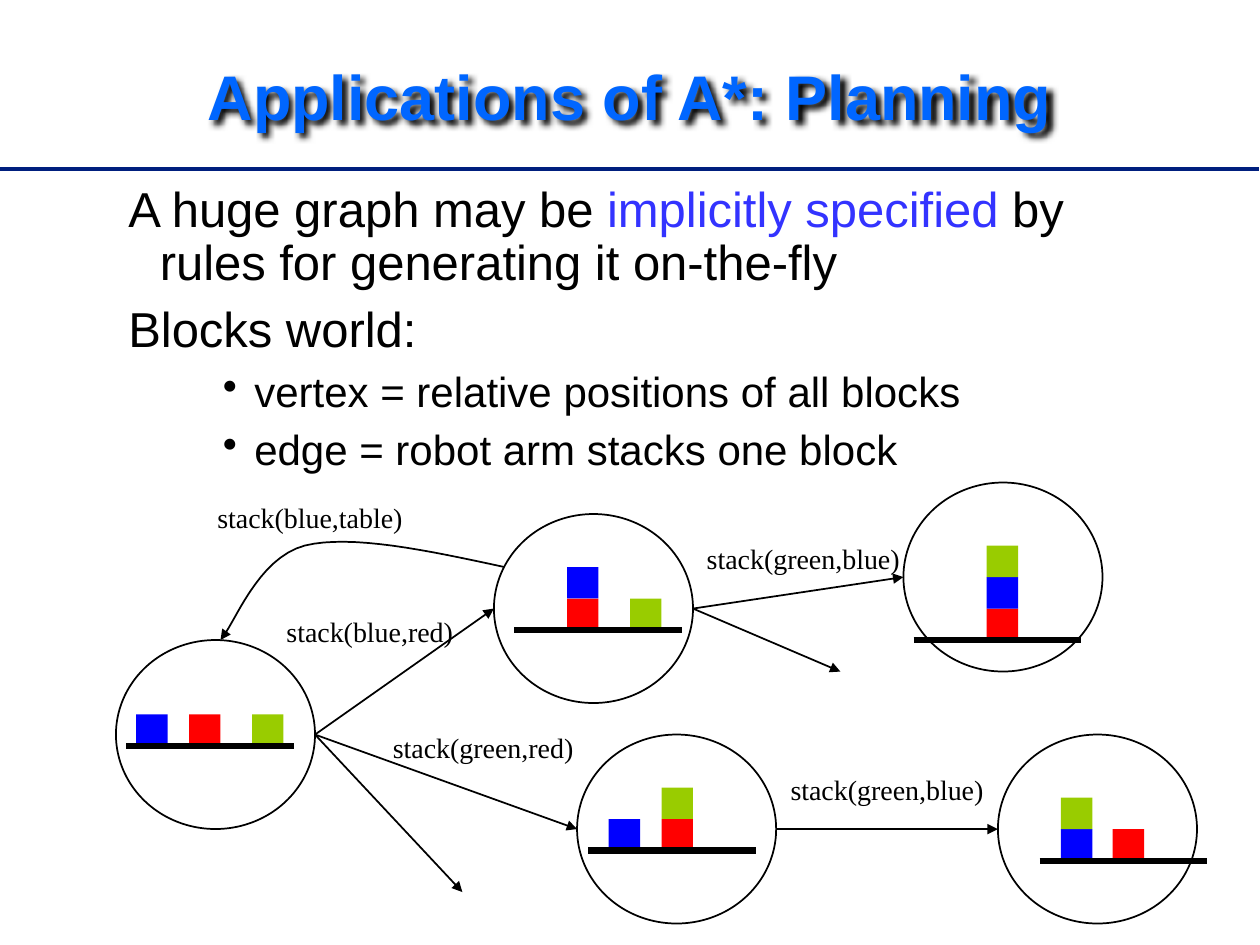
from lxml.etree import SubElement
from pptx import Presentation
from pptx.dml.color import RGBColor
from pptx.enum.shapes import MSO_CONNECTOR, MSO_SHAPE
from pptx.enum.text import MSO_ANCHOR, PP_ALIGN
from pptx.oxml.ns import qn
from pptx.util import Inches, Pt

BLACK, WHITE, BLUE, RED, GREEN = "000000", "FFFFFF", "0000FF", "FF0000", "99CC00"
CIRCLE_WIDTH, CIRCLE_HEIGHT, BLOCK, TABLE_WIDTH = 1.58, 1.5, 0.25, 1.33

# circle left and top, table left and top, stacks as (offset, colours from the bottom)
STATES = [
    (0.92, 5.08, 1, 5.92, [(0.08, [BLUE]), (0.5, [RED]), (1, [GREEN])]),
    (3.92, 4.08, 4.08, 5, [(0.42, [RED, BLUE]), (0.92, [GREEN])]),
    (7.17, 3.83, 7.25, 5.08, [(0.58, [RED, BLUE, GREEN])]),
    (4.58, 5.83, 4.67, 6.75, [(0.16, [BLUE]), (0.58, [RED, GREEN])]),
    (7.92, 5.83, 8.25, 6.83, [(0.17, [BLUE, GREEN]), (0.58, [RED])]),
]
ARROWS = [
    (2.5, 5.83, 3.92, 4.83),
    (2.5, 5.83, 4.58, 6.58),
    (2.5, 5.83, 3.67, 7.08),
    (5.5, 4.83, 7.17, 4.58),
    (5.5, 4.83, 6.67, 5.33),
    (6.17, 6.58, 7.92, 6.58),
]
LABELS = [
    ("stack(blue,red)", 2.17, 4.83, 1.53),
    ("stack(green,red)", 3, 5.75, 1.67),
    ("stack(green,blue)", 5.5, 4.25, 1.75),
    ("stack(blue,table)", 1.5, 3.92, 1.92),
    ("stack(green,blue)", 6, 6.08, 2.08),
]
RETURN_CURVE = [
    [(4, 4.5), (3.4, 4.37), (2.79, 4.24), (2.42, 4.33)],
    [(2.42, 4.33), (2.04, 4.43), (1.86, 4.96), (1.75, 5.08)],
]
BODY = [
    ([("A huge graph may be ", BLACK), ("implicitly specified", "3333FF"),
      (" by rules for generating it on-the-fly", BLACK)], False),
    ([("Blocks world:", BLACK)], False),
    ([("vertex = relative positions of all blocks", BLACK)], True),
    ([("edge = robot arm stacks one block", BLACK)], True),
]


def colour(value):
    return RGBColor.from_string(value)


def curve_points(segments, steps=16):
    points = [segments[0][0]]
    for segment in segments:
        for step in range(1, steps + 1):
            t = step / steps
            weights = ((1 - t) ** 3, 3 * t * (1 - t) ** 2, 3 * t * t * (1 - t), t ** 3)
            points.append(tuple(sum(w * p[axis] for w, p in zip(weights, segment))
                                for axis in (0, 1)))
    return points


class SlideBuilder:
    """Draws the elements of one slide in a shared style."""

    def __init__(self, slide):
        self.slide = slide

    def style_line(self, shape, line_colour, width, arrow=False):
        shape.line.color.rgb = colour(line_colour)
        shape.line.width = Pt(width)
        if arrow:
            SubElement(shape.line._get_or_add_ln(), qn("a:tailEnd"), type="triangle")

    def line(self, start_x, start_y, end_x, end_y, line_colour=BLACK, width=1, arrow=False):
        connector = self.slide.shapes.add_connector(
            MSO_CONNECTOR.STRAIGHT, Inches(start_x), Inches(start_y),
            Inches(end_x), Inches(end_y))
        self.style_line(connector, line_colour, width, arrow)
        SubElement(connector._element.spPr, qn("a:effectLst"))

    def curve(self, segments):
        first, *rest = [(Inches(x), Inches(y)) for x, y in curve_points(segments)]
        builder = self.slide.shapes.build_freeform(*first)
        builder.add_line_segments(rest, close=False)
        shape = builder.convert_to_shape()
        shape.fill.background()
        self.style_line(shape, BLACK, 1, arrow=True)
        shape.shadow.inherit = False

    def shape(self, kind, left, top, width, height, fill, outlined=False):
        shape = self.slide.shapes.add_shape(
            kind, Inches(left), Inches(top), Inches(width), Inches(height))
        shape.shadow.inherit = False
        shape.fill.solid()
        shape.fill.fore_color.rgb = colour(fill)
        if outlined:
            self.style_line(shape, BLACK, 1)
        else:
            shape.line.fill.background()

    def state(self, left, top, table_left, table_top, stacks):
        self.shape(MSO_SHAPE.OVAL, left, top, CIRCLE_WIDTH, CIRCLE_HEIGHT, WHITE, True)
        for offset, colours in stacks:
            for level, fill in enumerate(colours, start=1):
                self.shape(MSO_SHAPE.RECTANGLE, table_left + offset,
                           table_top - level * BLOCK, BLOCK, BLOCK, fill)
        self.line(table_left, table_top, table_left + TABLE_WIDTH, table_top, width=3.5)

    def text_box(self, left, top, width, height):
        box = self.slide.shapes.add_textbox(
            Inches(left), Inches(top), Inches(width), Inches(height))
        box.text_frame.word_wrap = True
        return box

    def run(self, paragraph, text, size, font, text_colour, bold=False):
        run = paragraph.add_run()
        run.text = text
        run.font.size = Pt(size)
        run.font.name = font
        run.font.bold = bold
        run.font.color.rgb = colour(text_colour)

    def title(self, text):
        box = self.text_box(0.75, 0.17, 8.5, 1.25)
        box.text_frame.vertical_anchor = MSO_ANCHOR.MIDDLE
        paragraph = box.text_frame.paragraphs[0]
        paragraph.alignment = PP_ALIGN.CENTER
        paragraph.line_spacing = 0.9
        self.run(paragraph, text, 36, "Arial", "0066FF", bold=True)
        effects = SubElement(box._element.spPr, qn("a:effectLst"))
        shadow = SubElement(effects, qn("a:outerShdw"), blurRad=str(Inches(0.05)),
                            dist=str(Inches(0.04)), dir="2700000")
        SubElement(shadow, qn("a:srgbClr"), val=BLACK)

    def body(self, entries):
        frame = self.text_box(0.92, 1.42, 8.5, 2.17).text_frame
        for index, (runs, bulleted) in enumerate(entries):
            paragraph = frame.add_paragraph() if index else frame.paragraphs[0]
            paragraph.line_spacing = 0.9
            paragraph.level = int(bulleted)
            properties = paragraph._p.get_or_add_pPr()
            properties.set("marL", str(Inches(1 if bulleted else 0.25)))
            properties.set("indent", str(Inches(-0.25)))
            before = SubElement(properties, qn("a:spcBef"))
            SubElement(before, qn("a:spcPct"), val="30000")
            if bulleted:
                SubElement(properties, qn("a:buChar"), char="•")
            for text, text_colour in runs:
                self.run(paragraph, text, 24 if bulleted else 28, "Arial", text_colour)

    def label(self, text, left, top, width):
        paragraph = self.text_box(left, top, width, 0.37).text_frame.paragraphs[0]
        paragraph.alignment = PP_ALIGN.CENTER
        self.run(paragraph, text, 16, "Times New Roman", BLACK)


def main():
    presentation = Presentation()
    presentation.slide_width = Inches(10)
    presentation.slide_height = Inches(7.5)
    builder = SlideBuilder(presentation.slides.add_slide(presentation.slide_layouts[6]))
    builder.line(0, 1.34, 9.99, 1.34, "001F7E", 2)
    builder.title("Applications of A*: Planning")
    builder.body(BODY)
    for state in STATES:
        builder.state(*state)
    for arrow in ARROWS:
        builder.line(*arrow, arrow=True)
    builder.curve(RETURN_CURVE)
    for label in LABELS:
        builder.label(*label)
    presentation.save("out.pptx")


if __name__ == "__main__":
    main()
